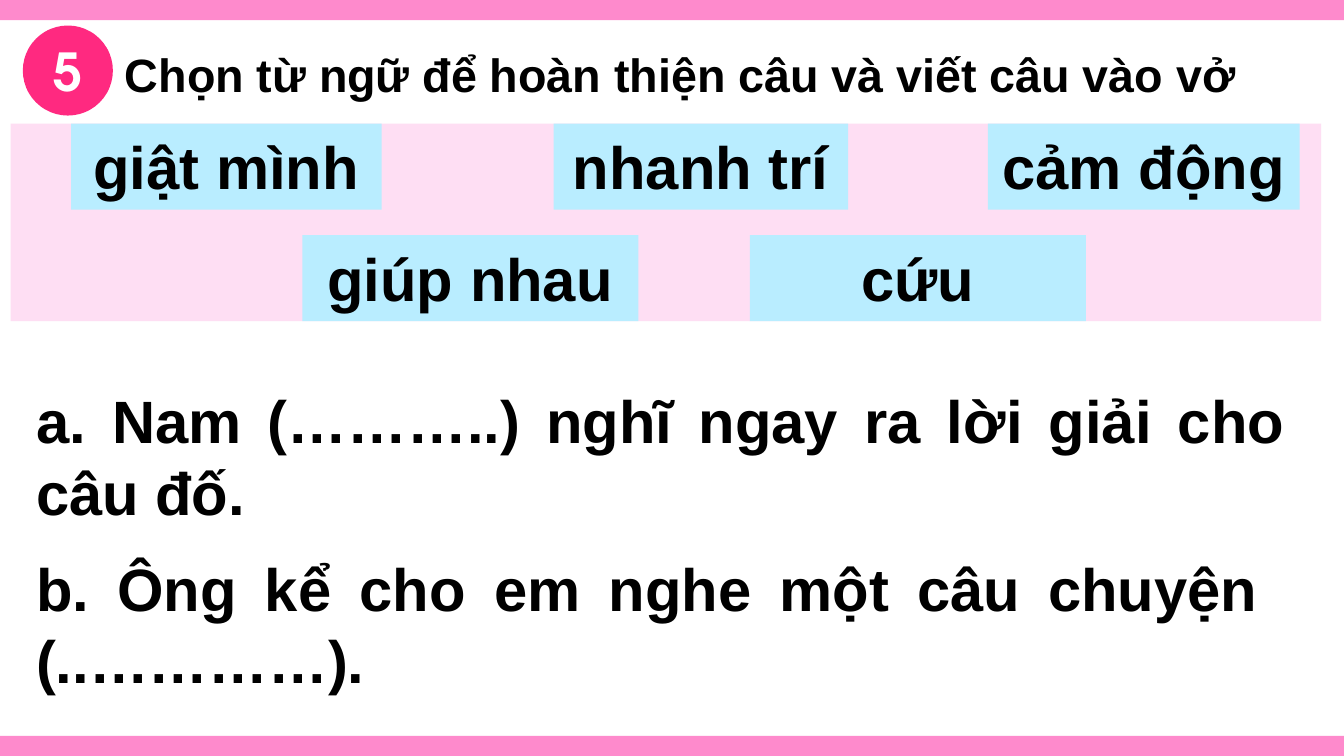
from pptx import Presentation
from pptx.dml.color import RGBColor
from pptx.enum import shapes, text
from pptx.util import Inches, Pt

TITLE = "Chọn từ ngữ để hoàn thiện câu và viết câu vào vở"
NUMBER = "5"
WORD_ROWS = [
    (0.92, [("giật mình", 0.53, 2.31), ("nhanh trí", 4.12, 2.19), ("cảm động", 7.35, 2.32)]),
    (1.75, [("giúp nhau", 2.25, 2.5), ("cứu", 5.58, 2.5)]),
]
SENTENCES = [
    ("a. Nam (………..) nghĩ ngay ra lời giải cho câu đố.", 0.1),
    ("b. Ông kể cho em nghe một câu chuyện (..…………).", 0.3),
]
THEME = dict(
    bar="FE8ACC", panel="FEDEF3", badge="FF2980", word="B9EDFF",
    ink="000000", white="FFFFFF", font="Arial", badge_font="TeX Gyre Adventor",
    title_size=25, badge_size=28, body_size=32,
)
WIDTH = 10
HEIGHT = WIDTH * 9 / 16
BAR = 0.15
JUSTIFY, CENTER = text.PP_ALIGN.JUSTIFY, text.PP_ALIGN.CENTER
TOP, MIDDLE = text.MSO_ANCHOR.TOP, text.MSO_ANCHOR.MIDDLE
RECT, OVAL = shapes.MSO_SHAPE.RECTANGLE, shapes.MSO_SHAPE.OVAL


def rgb(name):
    return RGBColor.from_string(THEME[name])


def write(sp, words, size, align, anchor=TOP, color="ink", font="font"):
    tf = sp.text_frame
    tf.word_wrap = True
    tf.auto_size = text.MSO_AUTO_SIZE.NONE
    tf.vertical_anchor = anchor
    p = tf.paragraphs[0]
    p.text = words
    p.alignment = align
    p.font.name = THEME[font]
    p.font.size = Pt(THEME[size])
    p.font.bold = True
    p.font.color.rgb = rgb(color)


def add_block(s, kind, box, fill):
    sp = s.shapes.add_shape(kind, *map(Inches, box))
    sp.shadow.inherit = False
    sp.fill.solid()
    sp.fill.fore_color.rgb = rgb(fill)
    sp.line.fill.background()
    return sp


def main():
    prs = Presentation()
    prs.slide_width, prs.slide_height = Inches(WIDTH), Inches(HEIGHT)
    s = prs.slides.add_slide(prs.slide_layouts[5])

    title = s.shapes.title
    title.left, title.top, title.width, title.height = map(Inches, (0.83, 0.29, 8.71, 0.52))
    write(title, TITLE, "title_size", JUSTIFY)

    add_block(s, RECT, (0.08, 0.92, 9.75, 1.47), "panel")
    for top in (0, HEIGHT - BAR):
        add_block(s, RECT, (0, top, WIDTH, BAR), "bar")

    badge = add_block(s, OVAL, (0.17, 0.19, 0.67, 0.67), "badge")
    write(badge, NUMBER, "badge_size", CENTER, MIDDLE, "white", "badge_font")

    for top, row in WORD_ROWS:
        for word, left, width in row:
            sp = add_block(s, RECT, (left, top, width, 0.64), "word")
            write(sp, word, "body_size", CENTER)

    for i, (sentence, margin) in enumerate(SENTENCES):
        sp = s.shapes.add_textbox(*map(Inches, (0.17, 2.81 + i * 1.25, 9.5, 1.18)))
        write(sp, sentence, "body_size", JUSTIFY)
        sp.text_frame.margin_right = Inches(margin)

    prs.save("out.pptx")


if __name__ == "__main__":
    main()
